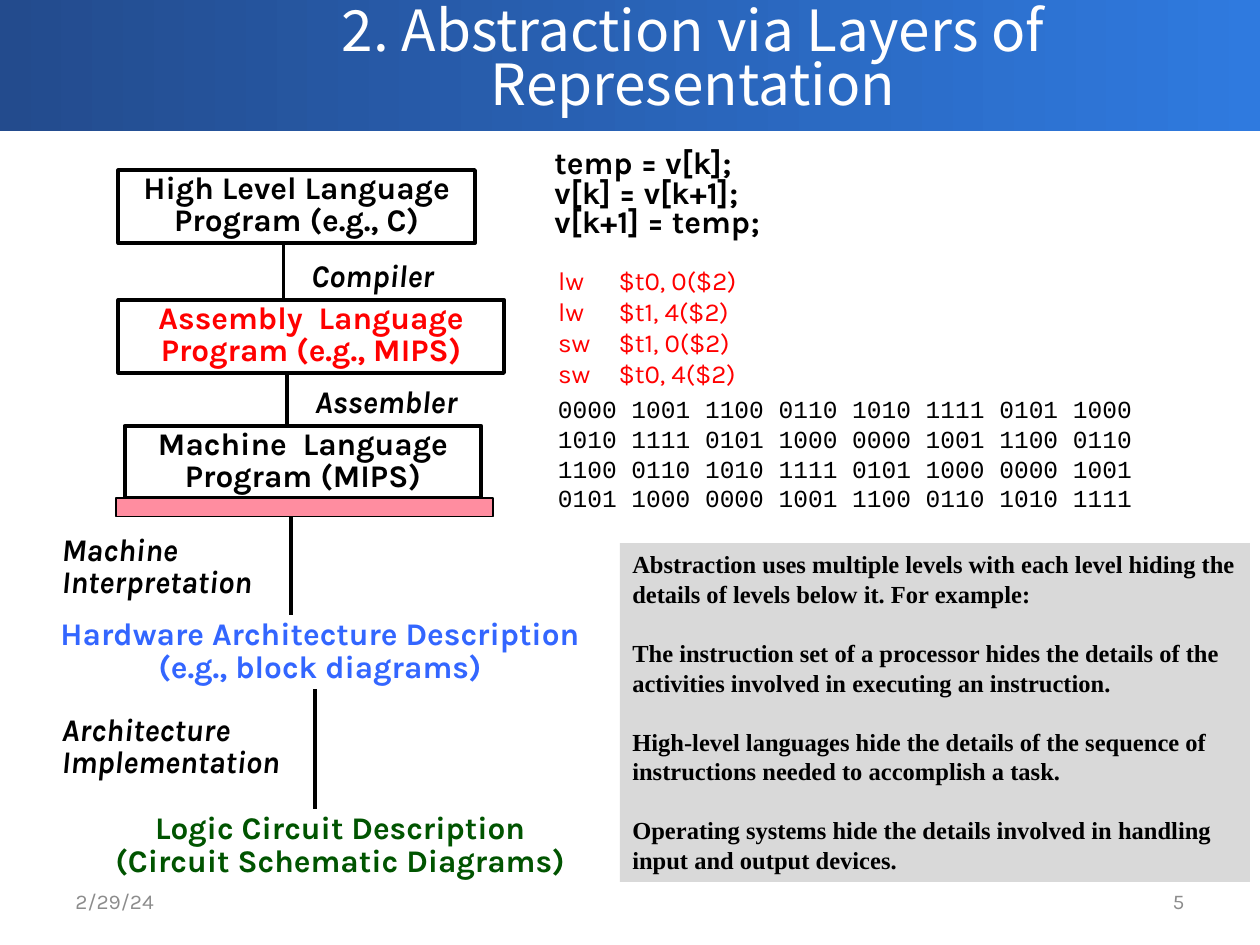
from dataclasses import dataclass, field

from lxml import etree
from pptx import Presentation
from pptx.dml.color import RGBColor
from pptx.enum.shapes import MSO_CONNECTOR, MSO_SHAPE
from pptx.enum.text import MSO_ANCHOR, MSO_AUTO_SIZE, PP_ALIGN
from pptx.oxml.ns import qn
from pptx.util import Inches, Pt

LEFT, CENTER, RIGHT = PP_ALIGN.LEFT, PP_ALIGN.CENTER, PP_ALIGN.RIGHT
TOP, MIDDLE = MSO_ANCHOR.TOP, MSO_ANCHOR.MIDDLE
RECTANGLE, STRAIGHT = MSO_SHAPE.RECTANGLE, MSO_CONNECTOR.STRAIGHT

BLACK = RGBColor(0x00, 0x00, 0x00)
WHITE = RGBColor(0xFF, 0xFF, 0xFF)
RED = RGBColor(0xFF, 0x00, 0x00)
BLUE = RGBColor(0x33, 0x66, 0xFF)
GREEN = RGBColor(0x00, 0x54, 0x00)
PINK = RGBColor(0xFF, 0x8D, 0xA0)
PALE_GRAY = RGBColor(0xD9, 0xD9, 0xD9)
FOOTER_GRAY = RGBColor(0x8C, 0x8C, 0x8C)
BAND_START = RGBColor(0x23, 0x4B, 0x8D)
BAND_END = RGBColor(0x2F, 0x7A, 0xDF)

TIGHT = (0.07, 0.03)
ROOMY = (0.1, 0.05)


@dataclass
class Style:
    """How the paragraphs of one box are set."""
    font: dict
    paragraph: dict = field(default_factory=dict)
    insets: tuple = TIGHT
    anchor: MSO_ANCHOR = TOP
    wrap: bool = True
    gap: float = 0
    hanging: float = 0


@dataclass
class Layer:
    """A level of representation, outlined or as plain text."""
    text: str
    place: tuple
    color: RGBColor = BLACK
    outlined: bool = True
    spacing: float = 0.85


@dataclass
class Label:
    """The translation step between two layers."""
    text: str
    place: tuple


def karla(size: float, color: RGBColor, **extra) -> dict:
    return {"name": "Karla", "size": Pt(size), "color": color, **extra}


def place_shape(shape, place: tuple) -> None:
    for name, value in zip(("left", "top", "width", "height"), place):
        setattr(shape, name, Inches(value))


def write(shape, lines: list, style: Style) -> None:
    """Fill a shape with paragraphs in one style."""
    frame = shape.text_frame
    frame.text = "\n".join(lines)
    side, edge = (Inches(value) for value in style.insets)
    frame_format = {
        "auto_size": MSO_AUTO_SIZE.NONE, "word_wrap": style.wrap,
        "vertical_anchor": style.anchor,
        "margin_left": side, "margin_right": side,
        "margin_top": edge, "margin_bottom": edge,
    }
    for name, value in frame_format.items():
        setattr(frame, name, value)
    for index, para in enumerate(frame.paragraphs):
        if style.hanging:
            properties = para._p.get_or_add_pPr()
            properties.set("marL", str(Inches(style.hanging)))
            properties.set("indent", str(-Inches(style.hanging)))
            etree.SubElement(properties, qn("a:buNone"))
        para.space_before = Pt(style.gap if index else 0)
        for name, value in style.paragraph.items():
            setattr(para, name, value)
        for span in para.runs:
            for name, value in style.font.items():
                if name == "color":
                    span.font.color.rgb = value
                else:
                    setattr(span.font, name, value)


def add_text(page, place: tuple, lines: list, style: Style) -> None:
    box = page.shapes.add_textbox(*(Inches(value) for value in place))
    write(box, lines, style)


def add_box(page, place: tuple, fill: RGBColor | None = None, line_width: float = 0):
    box = page.shapes.add_shape(RECTANGLE, *(Inches(value) for value in place))
    box.shadow.inherit = False
    if fill is None:
        box.fill.background()
    else:
        box.fill.solid()
        box.fill.fore_color.rgb = fill
    if line_width:
        box.line.color.rgb = BLACK
        box.line.width = Pt(line_width)
    else:
        box.line.fill.background()
    return box


def add_link(page, x: float, top: float, bottom: float) -> None:
    link = page.shapes.add_connector(
        STRAIGHT, Inches(x), Inches(top), Inches(x), Inches(bottom))
    link.line.color.rgb = BLACK
    link.line.width = Pt(2.25)
    etree.SubElement(link._element.spPr, qn("a:effectLst"))


LAYERS = [
    Layer("High Level Language\vProgram (e.g., C)", (0.94, 1.35, 2.83, 0.58)),
    Layer("Assembly  Language Program (e.g., MIPS)", (0.94, 2.38, 3.06, 0.58), RED),
    Layer("Machine  Language Program (MIPS)", (0.99, 3.38, 2.83, 0.57)),
    Layer("Hardware Architecture Description\v(e.g., block diagrams)",
          (0.33, 4.88, 4.42, 0.59), BLUE, False, 0.88),
    Layer("Logic Circuit Description\v(Circuit Schematic Diagrams)",
          (0.67, 6.42, 4.06, 0.59), GREEN, False, 0.88),
]
LABELS = [
    Label("Compiler", (2.4, 2.05, 1.43, 0.32)),
    Label("Assembler", (2.43, 3.05, 1.57, 0.32)),
    Label("Machine Interpretation", (0.42, 4.22, 1.83, 0.58)),
    Label("Architecture Implementation", (0.42, 5.65, 2.17, 0.58)),
]
LINK_POSITIONS = [2.25, 2.28, 2.31, 2.5]

C_CODE = ["temp = v[k];", "v[k] = v[k+1];", "v[k+1] = temp;"]
ASSEMBLY_CODE = ["lw\t$t0, 0($2)", "lw\t$t1, 4($2)", "sw\t$t1, 0($2)", "sw\t$t0, 4($2)"]
MACHINE_CODE = [
    "0000 1001 1100 0110 1010 1111 0101 1000",
    "1010 1111 0101 1000 0000 1001 1100 0110",
    "1100 0110 1010 1111 0101 1000 0000 1001",
    "0101 1000 0000 1001 1100 0110 1010 1111",
]
SUMMARY = [
    "Abstraction uses multiple levels with each level hiding the details of levels "
    "below it. For example:",
    "The instruction set of a processor hides the details of the activities involved "
    "in executing an instruction.",
    "High-level languages hide the details of the sequence of instructions needed to "
    "accomplish a task.",
    "Operating systems hide the details involved in handling input and output devices.",
]


def main() -> None:
    deck = Presentation()
    deck.slide_width, deck.slide_height = Inches(10), Inches(7.5)
    page = deck.slides.add_slide(deck.slide_layouts[1])

    # Title on a gradient band, which goes behind everything else
    band = add_box(page, (0, -0.03, 10, 1.07), BAND_START)
    band.fill.gradient()
    band.fill.gradient_angle = 0
    for stop, color, position in zip(band.fill.gradient_stops, (BAND_START, BAND_END), (0, 1)):
        stop.color.rgb = color
        stop.position = position
    page.shapes._spTree.insert(2, band._element)
    title = page.shapes.title
    place_shape(title, (1, 0, 9, 0.99))
    title_font = {"name": "Noto Sans CJK SC", "size": Pt(32.4), "color": WHITE}
    write(title, ["2. Abstraction via Layers of Representation"],
          Style(title_font, {"alignment": CENTER, "line_spacing": 0.8}, ROOMY, MIDDLE))

    # Chain of layers, joined from each bottom edge to the next top edge
    for layer in LAYERS:
        box = add_box(page, layer.place, line_width=2.25 if layer.outlined else 0)
        write(box, [layer.text], Style(
            karla(18, layer.color, bold=True),
            {"alignment": CENTER, "line_spacing": layer.spacing}))
    for x, upper, lower in zip(LINK_POSITIONS, LAYERS, LAYERS[1:]):
        add_link(page, x, upper.place[1] + upper.place[3], lower.place[1])
    for label in LABELS:
        add_text(page, label.place, [label.text], Style(
            karla(18, BLACK, bold=True, italic=True), {"line_spacing": 0.85}))

    # Bar between software and hardware
    add_box(page, (0.92, 3.95, 2.99, 0.15), PINK, 1)

    # The same program at three levels
    add_text(page, (4.33, 1.17, 3.38, 0.78), C_CODE,
             Style(karla(18, BLACK, bold=True), {"line_spacing": 0.78}))
    assembly = page.placeholders[1]
    place_shape(assembly, (4.33, 2.05, 4.21, 0.98))
    write(assembly, ASSEMBLY_CODE, Style(
        karla(14.8, RED), {"alignment": LEFT}, ROOMY, hanging=0.48))
    add_text(page, (4.33, 3.08, 4.9, 1.04), MACHINE_CODE, Style(
        {"name": "Courier New", "size": Pt(14), "color": BLACK},
        {"line_spacing": Pt(16.9)}, ROOMY, wrap=False))

    # Summary panel
    panel = add_box(page, (4.92, 4.31, 5, 2.69), PALE_GRAY)
    write(panel, SUMMARY, Style(
        {"name": "Times New Roman", "size": Pt(14), "color": BLACK, "bold": True},
        {"alignment": LEFT, "line_spacing": Pt(16.9)}, ROOMY, gap=16.9))

    # Date and page number
    for left, text, alignment in ((0.5, "2/29/24", LEFT), (7.17, "5", RIGHT)):
        add_text(page, (left, 6.95, 2.33, 0.4), [text], Style(
            karla(12, FOOTER_GRAY), {"alignment": alignment}, ROOMY, MIDDLE))

    deck.save("out.pptx")


if __name__ == "__main__":
    main()
